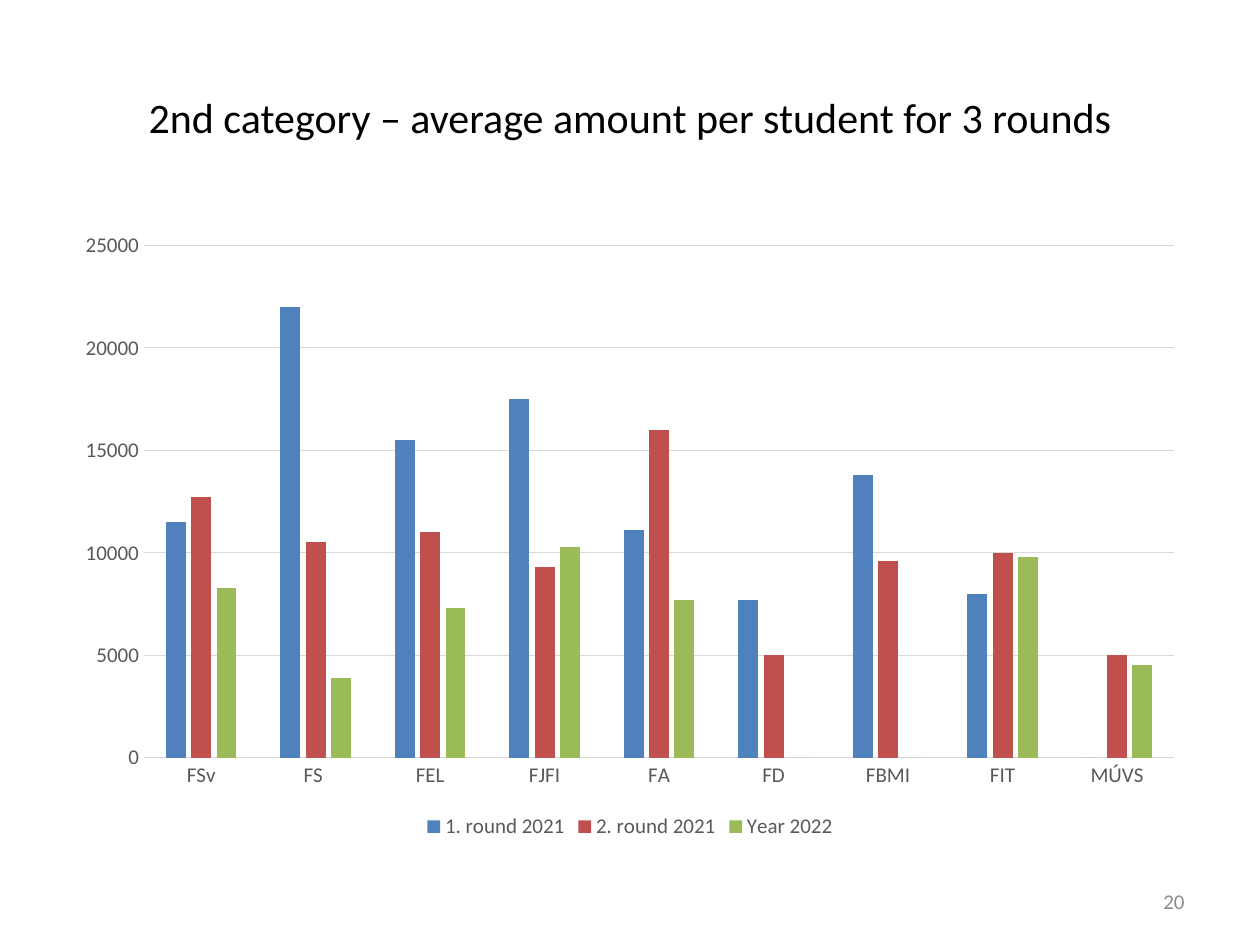
from dataclasses import dataclass

from pptx import Presentation
from pptx import util as u
from pptx.chart.data import CategoryChartData
from pptx.dml.color import RGBColor
from pptx.enum import chart as charts
from pptx.enum import text

FONT = "Calibri"
COLORS = {
    "title": "000000",
    "label": "595959",
    "number": "8C8C8C",
    "grid": "D9D9D9",
    "blue": "4F81BD",
    "red": "C0504D",
    "green": "9BBB59",
}
FACULTIES = ["FSv", "FS ", "FEL", "FJFI", "FA", "FD", "FBMI", "FIT", "MÚVS"]


@dataclass
class Round:
    name: str
    color: str
    amounts: list[int]


ROUNDS = [
    Round("1. round 2021", "blue",
          [11500, 22000, 15500, 17500, 11100, 7700, 13800, 8000, 0]),
    Round("2. round 2021", "red",
          [12700, 10500, 11000, 9300, 16000, 5000, 9600, 10000, 5000]),
    Round("Year 2022", "green",
          [8300, 3900, 7300, 10300, 7700, 0, 0, 9800, 4500]),
]


def rgb(name: str) -> RGBColor:
    return RGBColor.from_string(COLORS[name])


def style_font(font, size: float, color: str) -> None:
    font.name = FONT
    font.size = u.Pt(size)
    font.color.rgb = rgb(color)


def style_line(line) -> None:
    line.color.rgb = rgb("grid")
    line.width = u.Pt(0.75)


def write_line(shape, content: str, size: float, color: str, alignment) -> None:
    frame = shape.text_frame
    frame.text = content
    frame.word_wrap = True
    frame.vertical_anchor = text.MSO_ANCHOR.MIDDLE
    paragraph = frame.paragraphs[0]
    paragraph.alignment = alignment
    style_font(paragraph.runs[0].font, size, color)


def add_amount_chart(slide) -> None:
    data = CategoryChartData()
    data.categories = FACULTIES
    for entry in ROUNDS:
        data.add_series(entry.name, entry.amounts)
    chart = slide.shapes.add_chart(
        charts.XL_CHART_TYPE.COLUMN_CLUSTERED,
        u.Inches(0.5), u.Inches(1.75), u.Inches(9), u.Inches(4.95), data,
    ).chart
    chart.has_title = False
    style_font(chart.font, 12, "label")

    # Columns
    plot = chart.plots[0]
    plot.gap_width = 219
    plot.overlap = -27
    plot.vary_by_categories = False
    for series, entry in zip(plot.series, ROUNDS):
        series.format.fill.solid()
        series.format.fill.fore_color.rgb = rgb(entry.color)
        series.invert_if_negative = False

    # Axes
    for axis in (chart.category_axis, chart.value_axis):
        axis.major_tick_mark = charts.XL_TICK_MARK.NONE
        axis.minor_tick_mark = charts.XL_TICK_MARK.NONE
        style_font(axis.tick_labels.font, 12, "label")
    style_line(chart.category_axis.format.line)
    value_axis = chart.value_axis
    value_axis.minimum_scale = 0
    value_axis.maximum_scale = 25000
    value_axis.major_unit = 5000
    value_axis.format.line.fill.background()
    value_axis.has_major_gridlines = True
    style_line(value_axis.major_gridlines.format.line)

    # Legend
    chart.has_legend = True
    chart.legend.position = charts.XL_LEGEND_POSITION.BOTTOM
    chart.legend.include_in_layout = False
    style_font(chart.legend.font, 12, "label")


def main() -> None:
    presentation = Presentation()
    presentation.slide_width = u.Inches(10)
    presentation.slide_height = u.Inches(7.5)
    slide = presentation.slides.add_slide(presentation.slide_layouts[5])

    # Title
    title = slide.shapes.title
    title.left, title.top = u.Inches(0.5), u.Inches(0.3)
    title.width, title.height = u.Inches(9), u.Inches(1.25)
    write_line(title, "2nd category – average amount per student for 3 rounds",
               24, "title", text.PP_ALIGN.CENTER)

    add_amount_chart(slide)

    # Slide number
    number = slide.shapes.add_textbox(
        u.Inches(7.17), u.Inches(6.95), u.Inches(2.33), u.Inches(0.4))
    write_line(number, "20", 12, "number", text.PP_ALIGN.RIGHT)

    presentation.save("out.pptx")


if __name__ == "__main__":
    main()
